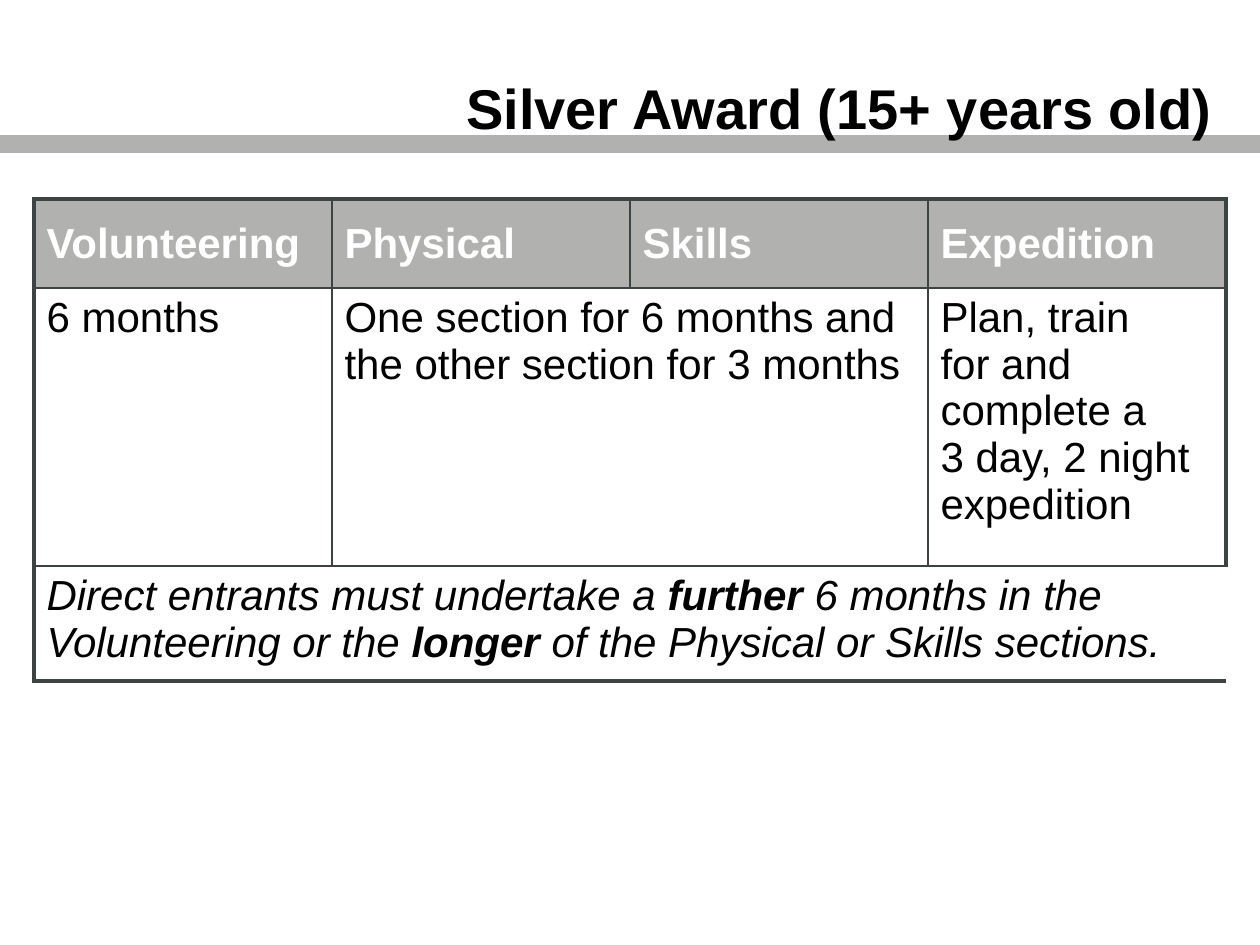
from dataclasses import dataclass
from lxml.etree import SubElement as Sub
from pptx import Presentation
from pptx.dml.color import RGBColor as Rgb
from pptx.enum.shapes import MSO_CONNECTOR as Conn
from pptx.enum.text import MSO_ANCHOR as Anchor, PP_ALIGN as Align
from pptx.oxml.ns import qn
from pptx.util import Emu, Pt

SCALE = 914400 // 126
PLAIN_STYLE = "{2D5ABB26-0587-4C30-8999-92F81FD0307C}"


@dataclass(frozen=True)
class Theme:
    font: str = "Arial"
    ink: str = "000000"
    pale: str = "FFFFFF"
    grey: str = "B1B1AF"
    edge: str = "3D4242"
    title: int = 32
    body: int = 24
    bar: int = 10
    thin: float = 1
    thick: float = 2.25


THEME = Theme()
COLS = [298] * 4
ROWS = [89, 278, 115]
HEADS = ["Volunteering", "Physical", "Skills", "Expedition"]
TERMS = {
    0: ["6 months"],
    1: ["One section for 6 months and the other section for 3 months"],
    3: ["Plan, train", "for and complete a", "3 day, 2 night expedition"],
}
NOTE = [
    ("Direct entrants must undertake a ", False),
    ("further ", True),
    ("6 months in the Volunteering or the ", False),
    ("longer", True),
    (" of the Physical or Skills sections.", False),
]


def px(n):
    return Emu(n * SCALE)


def add_run(para, text, size=THEME.body, color=THEME.ink, bold=False, italic=False):
    run = para.add_run()
    run.text = text
    font = run.font
    font.name, font.size = THEME.font, Pt(size)
    font.bold, font.italic = bold, italic
    font.color.rgb = Rgb.from_string(color)


def add_bar(slide, y, width):
    bar = slide.shapes.add_connector(Conn.STRAIGHT, 0, px(y), px(width), px(y))
    bar.line.color.rgb = Rgb.from_string(THEME.grey)
    bar.line.width = Pt(THEME.bar)
    Sub(bar._element.spPr, qn("a:effectLst"))


def add_title(slide, text):
    box = slide.shapes.add_textbox(px(34), 0, px(1191), px(145))
    frame = box.text_frame
    frame.word_wrap = True
    frame.vertical_anchor = Anchor.BOTTOM
    frame.margin_bottom = px(4)
    para = frame.paragraphs[0]
    para.alignment = Align.RIGHT
    add_run(para, text, THEME.title, bold=True)


def add_edge(cell, side, width):
    line = Sub(cell._tc.get_or_add_tcPr(), qn(f"a:ln{side}"), w=str(Pt(width)))
    Sub(Sub(line, qn("a:solidFill")), qn("a:srgbClr"), val=THEME.edge)


def frame_cell(table, row, col):
    """Edge a cell: thick on the table's rim, none inside a merged span."""
    cell = table.cell(row, col)
    last_row, last_col = len(ROWS) - 1, len(COLS) - 1
    rim = {"L": col == 0, "R": col == last_col, "T": row == 0, "B": row == last_row}
    inner = {
        "L": cell.is_spanned,
        "R": col < last_col and table.cell(row, col + 1).is_spanned,
    }
    for side, outer in rim.items():
        if not inner.get(side):
            add_edge(cell, side, THEME.thick if outer else THEME.thin)


def add_grid(slide):
    shape = slide.shapes.add_table(
        len(ROWS), len(COLS), px(34), px(199), px(sum(COLS)), px(sum(ROWS)))
    table = shape.table
    table.first_row = table.horz_banding = False
    table._tbl.tblPr.find(qn("a:tableStyleId")).text = PLAIN_STYLE
    for col, width in zip(table.columns, COLS):
        col.width = px(width)
    for row, height in zip(table.rows, ROWS):
        row.height = px(height)
    table.cell(1, 1).merge(table.cell(1, 2))
    table.cell(2, 0).merge(table.cell(2, 3))
    for row in range(len(ROWS)):
        for col in range(len(COLS)):
            frame_cell(table, row, col)
            fill = table.cell(row, col).fill
            if row == 0:
                fill.solid()
                fill.fore_color.rgb = Rgb.from_string(THEME.grey)
            else:
                fill.background()
    return table


def fill_grid(table):
    for col, head in enumerate(HEADS):
        cell = table.cell(0, col)
        cell.vertical_anchor = Anchor.MIDDLE
        add_run(cell.text_frame.paragraphs[0], head, color=THEME.pale, bold=True)
    for col, lines in TERMS.items():
        para = table.cell(1, col).text_frame.paragraphs[0]
        for i, line in enumerate(lines):
            if i:
                para.add_line_break()
            add_run(para, line)
    para = table.cell(2, 0).text_frame.paragraphs[0]
    for text, bold in NOTE:
        add_run(para, text, bold=bold, italic=True)


def main():
    deck = Presentation()
    deck.slide_width, deck.slide_height = px(1260), px(945)
    slide = deck.slides.add_slide(deck.slide_layouts[6])
    add_bar(slide, 144, 1260)
    add_title(slide, "Silver Award (15+ years old)")
    fill_grid(add_grid(slide))
    deck.save("out.pptx")


if __name__ == "__main__":
    main()
